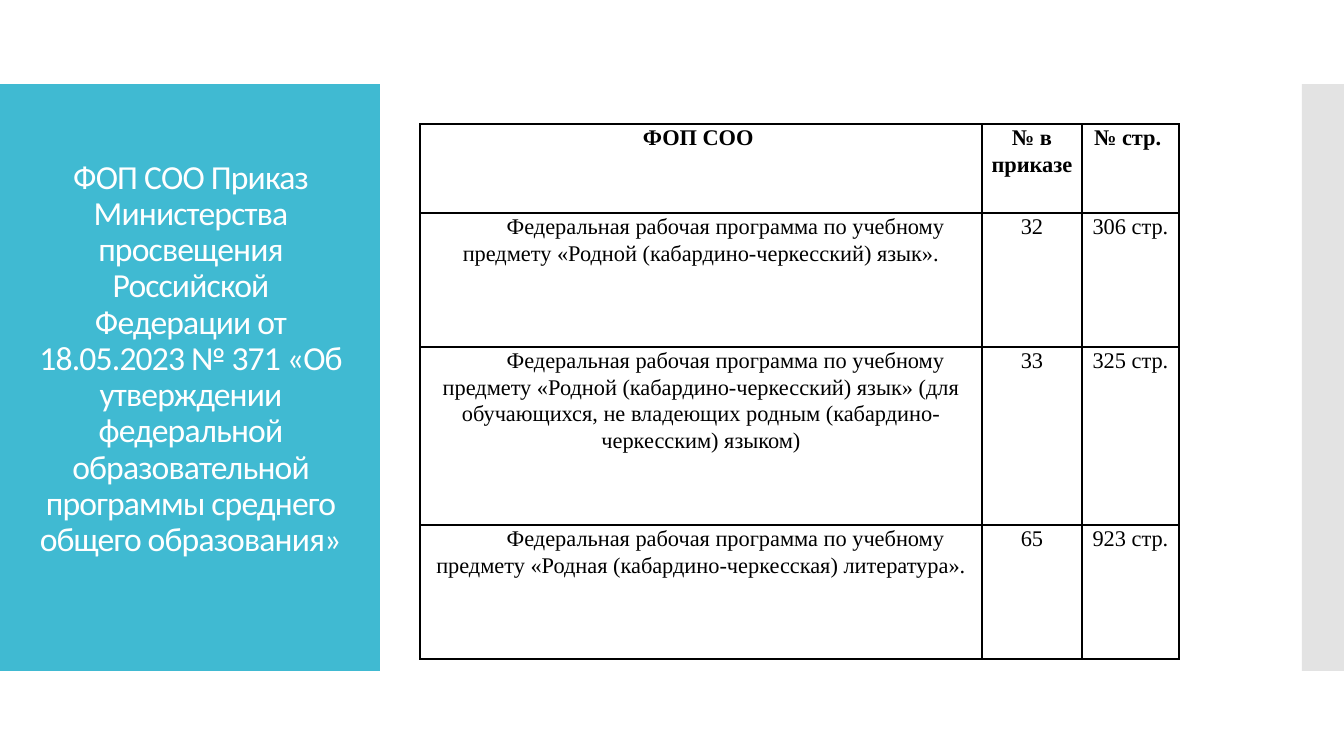
from lxml import etree
from pptx import Presentation
from pptx import util as u
from pptx.dml.color import RGBColor
from pptx.enum import shapes, text
from pptx.oxml.ns import qn

PX = 12192000 / 1344
COLORS = {"panel": "40BAD2", "strip": "C8C8C8", "title": "FFFFFF", "ink": "000000"}


def px(*lengths):
    return [u.Emu(round(length * PX)) for length in lengths]


def write(paragraph, words, spacing, font):
    paragraph.alignment = text.PP_ALIGN.CENTER
    paragraph.line_spacing = spacing
    run = paragraph.add_run()
    run.text = words
    for key, value in font.items():
        if key == "color":
            run.font.color.rgb = RGBColor.from_string(value)
        else:
            setattr(run.font, key, value)
    return run


deck = Presentation()
deck.slide_width, deck.slide_height = px(1344, 756)
slide = deck.slides.add_slide(deck.slide_layouts[6])

for part, left, width in [("panel", 0, 380), ("strip", 1302, 42)]:
    band = slide.shapes.add_shape(shapes.MSO_SHAPE.RECTANGLE, *px(left, 84, width, 587))
    band.shadow.inherit = False
    band.fill.solid()
    band.fill.fore_color.rgb = RGBColor.from_string(COLORS[part])
    band.line.fill.background()
strip_color = band.fill._xPr.find(qn("a:solidFill"))[0]
etree.SubElement(strip_color, qn("a:alpha"), val="50000")

decree = slide.shapes.add_textbox(*px(28, 124, 325, 471)).text_frame
decree.word_wrap = True
decree.vertical_anchor = text.MSO_ANCHOR.MIDDLE
decree_run = write(
    decree.paragraphs[0],
    "ФОП СОО Приказ Министерства просвещения Российской Федерации от 18.05.2023 № 371 "
    "«Об утверждении федеральной образовательной программы среднего общего образования»",
    0.9,
    {"name": "Calibri", "size": u.Pt(24), "color": COLORS["title"]},
)
decree_run.font._element.set("spc", "-60")

PROGRAM = "Федеральная рабочая программа по учебному предмету "
programs = [
    ("ФОП СОО ", "№ в приказе ", "№ стр. "),
    (PROGRAM + "«Родной (кабардино-черкесский) язык».", "32", "306 стр."),
    (PROGRAM + "«Родной (кабардино-черкесский) язык» (для обучающихся, не владеющих "
     "родным (кабардино-черкесским) языком)", "33", "325 стр."),
    (PROGRAM + "«Родная (кабардино-черкесская) литература».", "65", "923 стр."),
]
widths, heights = [562, 100, 97], [89, 134, 178, 134]
register = slide.shapes.add_table(
    len(heights), len(widths), *px(420, 124, sum(widths), sum(heights))
).table
register.first_row = register.horz_banding = False
for column, width in zip(register.columns, px(*widths)):
    column.width = width
for row, height in zip(register.rows, px(*heights)):
    row.height = height

cell_format = dict(zip(
    ["margin_left", "margin_right", "margin_top", "margin_bottom"], px(7, 7, 0, 0)
))
for r, entries in enumerate(programs):
    for c, words in enumerate(entries):
        cell = register.cell(r, c)
        for key, value in cell_format.items():
            setattr(cell, key, value)
        paragraph = cell.text_frame.paragraphs[0]
        write(paragraph, words, 1.07, {
            "name": "Times New Roman", "size": u.Pt(16), "bold": r == 0, "color": COLORS["ink"],
        })
        if r and c == 0:
            paragraph._p.get_or_add_pPr().set("indent", str(px(49)[0]))
        borders = cell._tc.get_or_add_tcPr()
        for side in ["lnL", "lnR", "lnT", "lnB"]:
            edge = etree.SubElement(borders, qn(f"a:{side}"), w=str(u.Pt(1)))
            ink = etree.SubElement(edge, qn("a:solidFill"))
            etree.SubElement(ink, qn("a:srgbClr"), val=COLORS["ink"])
        cell.fill.background()

deck.save("out.pptx")
